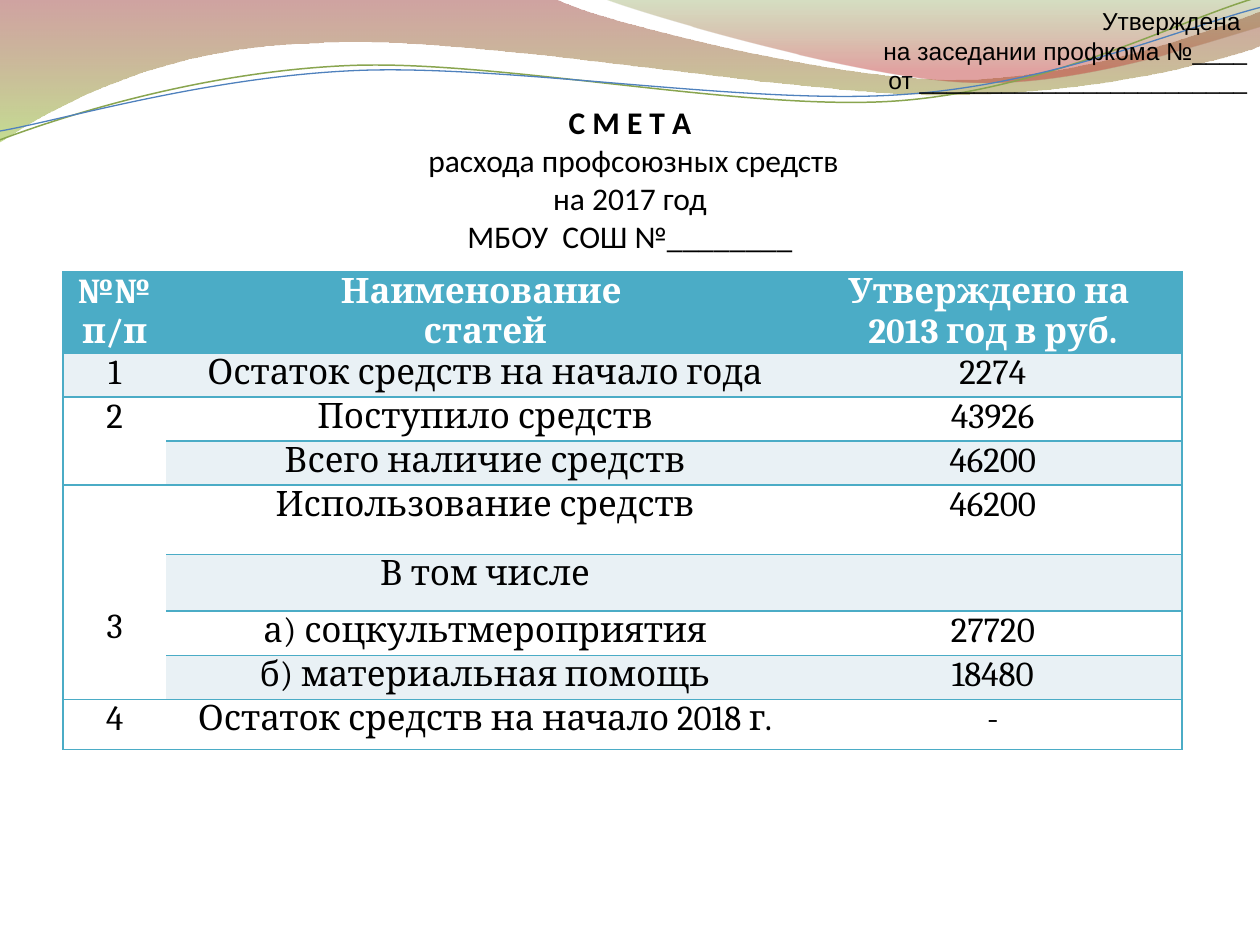
import math
import lxml.etree
import pptx
import pptx.util
import pptx.dml.color
import pptx.enum.text
import pptx.oxml
import pptx.oxml.ns

Inches = pptx.util.Inches
qn = pptx.oxml.ns.qn
ALIGN = pptx.enum.text.PP_ALIGN
ANCHOR = pptx.enum.text.MSO_ANCHOR
TEAL = "4BACC6"
TILT = 2.7


def rgb(value):
    return pptx.dml.color.RGBColor.from_string(value)


def write(paragraph, text, size=18, font="Calibri", color="000000", bold=False, align=ALIGN.CENTER):
    paragraph.alignment = align
    for index, line in enumerate(text.split("\n")):
        if index:
            paragraph.add_line_break()
        run = paragraph.add_run()
        run.text = line
        run.font.size = pptx.util.Pt(size)
        run.font.name = font
        run.font.bold = bold
        run.font.color.rgb = rgb(color)


presentation = pptx.Presentation()
presentation.slide_width = Inches(10)
presentation.slide_height = Inches(7.5)
slide = presentation.slides.add_slide(presentation.slide_layouts[5])

# Waves along the top: one point makes a straight segment, three a Bezier curve.
# Gradient stops are (position, colour, opacity in percent).
waves = [
    {"start": (0, 0),
     "segments": [[(4.4, -0.01)],
                  [(4.76, 0.17), (6.64, 0.63), (7.58, 0.63)],
                  [(8.53, 0.63), (9.58, 0.26), (10, 0.09)],
                  [(10.01, 0.36)],
                  [(9.83, 0.44), (8.7, 0.76), (7.46, 0.75)],
                  [(6.22, 0.75), (3.82, 0.28), (2.57, 0.34)],
                  [(1.29, 0.36), (0.46, 0.83), (-0.01, 1.13)],
                  [(0, 0)]],
     "gradient": [(0, "973330", 45), (1, "95C238", 55)]},
    {"start": (4.79, -0.01),
     "segments": [[(5.09, 0.11), (6.82, 0.62), (7.69, 0.65)],
                  [(8.56, 0.69), (9.61, 0.32), (10, 0.21)],
                  [(10, 0)],
                  [(4.79, -0.01)]],
     "gradient": [(0, "769537", 30), (0.8, "BE3330", 45)]},
    {"start": (0, 1.11), "center": (4.99, 0.57),
     "segments": [[(0.48, 0.93), (1.58, 0.57), (2.77, 0.52)],
                  [(3.95, 0.47), (5.93, 0.89), (7.13, 0.8)],
                  [(8.33, 0.71), (9.38, 0.15), (9.98, -0.02)]],
     "line": ("89A54F", 0.85)},
    {"start": (0, 1.04), "center": (5, 0.59),
     "segments": [[(0.47, 0.96), (1.64, 0.61), (2.83, 0.56)],
                  [(4.03, 0.51), (5.97, 0.84), (7.17, 0.75)],
                  [(8.36, 0.67), (9.41, 0.21), (10, 0.06)]],
     "line": ("4F81BD", 0.75)},
]
for wave in waves:
    points = [wave["start"]] + [point for segment in wave["segments"] for point in segment]
    if "line" in wave:
        # Level the outline here; the shape's rotation tilts it back
        x0, y0 = wave["center"]
        sine, cosine = math.sin(math.radians(TILT)), math.cos(math.radians(TILT))
        points = [(x0 + (x - x0) * cosine - (y - y0) * sine,
                   y0 + (x - x0) * sine + (y - y0) * cosine) for x, y in points]
    vertices = [(Inches(x), Inches(y)) for x, y in points]
    builder = slide.shapes.build_freeform(*vertices[0])
    builder.add_line_segments(vertices[1:], close="gradient" in wave)
    shape = builder.convert_to_shape()
    shape.shadow.inherit = False

    # Join each three straight steps of a curved segment into one Bezier
    steps = iter(list(shape.element.iter(qn("a:lnTo"))))
    for segment in wave["segments"]:
        nodes = [next(steps) for point in segment]
        if len(nodes) == 3:
            nodes[0].addprevious(curve := lxml.etree.Element(qn("a:cubicBezTo")))
            for node in nodes:
                curve.append(node[0])
                node.getparent().remove(node)

    if "gradient" in wave:
        shape.line.fill.background()
        shape.fill.gradient()
        shape.fill.gradient_angle = 270
        for stop, (position, color, opacity) in zip(shape.fill.gradient_stops, wave["gradient"]):
            stop.position = position
            stop.color.rgb = rgb(color)
        color_nodes = shape.element.spPr.findall(".//" + qn("a:srgbClr"))
        for node, (position, color, opacity) in zip(color_nodes, wave["gradient"]):
            alpha = lxml.etree.SubElement(node, qn("a:alpha"))
            alpha.set("val", str(opacity * 1000))
    else:
        color, width = wave["line"]
        shape.rotation = 360 - TILT
        shape.fill.background()
        shape.line.color.rgb = rgb(color)
        shape.line.width = pptx.util.Pt(width)

# Title, brought in front of the waves
title = slide.shapes.title
title.left, title.top, title.width, title.height = Inches(0.5), Inches(0.77), Inches(9), Inches(1.25)
frame = title.text_frame
frame.word_wrap = True
frame.auto_size = pptx.enum.text.MSO_AUTO_SIZE.NONE
frame.vertical_anchor = ANCHOR.BOTTOM
frame.margin_left = frame.margin_right = frame.margin_bottom = 0
heading = frame.paragraphs[0]
write(heading, "С М Е Т А", bold=True)
heading.add_line_break()
write(heading, " расхода профсоюзных средств\nна 2017 год\nМБОУ  СОШ №________")
slide.shapes._spTree.append(title.element)

# Budget table
column_widths = [0.82, 5.06, 3]
row_heights = [0.4, 0.35, 0.35, 0.35, 0.55, 0.45, 0.35, 0.35, 0.4]
rows = [
    ["№№\nп/п", "Наименование \nстатей", "Утверждено на \n2013 год в руб."],
    ["1", "Остаток средств на начало года", "2274"],
    ["2", "Поступило средств", "43926"],
    ["", "Всего наличие средств", "46200"],
    ["3", "Использование средств", "46200"],
    ["", "В том числе", ""],
    ["", "а) соцкультмероприятия", "27720"],
    ["", "б) материальная помощь", "18480"],
    ["4", "Остаток средств на начало 2018 г.", "-"],
]
merged_rows = [(2, 3), (4, 7)]
table_frame = slide.shapes.add_table(len(rows), len(column_widths), Inches(0.5), Inches(2.16),
                                     Inches(sum(column_widths)), Inches(sum(row_heights)))
table = table_frame.table
table._tbl.tblPr.find(qn("a:tableStyleId")).text = "{2D5ABB26-0587-4C30-8999-92F81FD0307C}"
for column, width in zip(table.columns, column_widths):
    column.width = Inches(width)
for first, last in merged_rows:
    table.cell(first, 0).merge(table.cell(last, 0))

for row_index, (texts, height) in enumerate(zip(rows, row_heights)):
    table.rows[row_index].height = Inches(height)
    header = row_index == 0
    for column_index, text in enumerate(texts):
        cell = table.cell(row_index, column_index)
        cell.margin_left = cell.margin_right = Inches(0.07)
        cell.margin_top = Inches(0.97) if text == "3" else 0
        cell.margin_bottom = 0
        for side in ("LTB", "TB", "RTB")[column_index]:
            cell._tc.get_or_add_tcPr().append(pptx.oxml.parse_xml(
                f'<a:ln{side} {pptx.oxml.ns.nsdecls("a")} w="12700"><a:solidFill>'
                f'<a:srgbClr val="{TEAL}"/></a:solidFill></a:ln{side}>'))
        banded = row_index % 2 == 1 and not cell.is_spanned
        cell.fill.solid()
        cell.fill.fore_color.rgb = rgb(TEAL if header else "E9F1F5" if banded else "FFFFFF")
        if text:
            for line_index, line in enumerate(text.split("\n")):
                frame = cell.text_frame
                paragraph = frame.add_paragraph() if line_index else frame.paragraphs[0]
                write(paragraph, line, size=20, font="Cambria", bold=header,
                      color="FFFFFF" if header else "000000")

# Approval note
note = slide.shapes.add_textbox(Inches(6.89), 0, Inches(3.11), Inches(1.11))
frame = note.text_frame
frame.word_wrap = False
frame.vertical_anchor = ANCHOR.TOP
frame.margin_top = Inches(0.05)
note_lines = [" Утверждена ", "на заседании профкома №____", "от ________________________"]
for index, line in enumerate(note_lines):
    paragraph = frame.add_paragraph() if index else frame.paragraphs[0]
    write(paragraph, line, size=14, font="Arial", align=ALIGN.RIGHT)

presentation.save("out.pptx")
